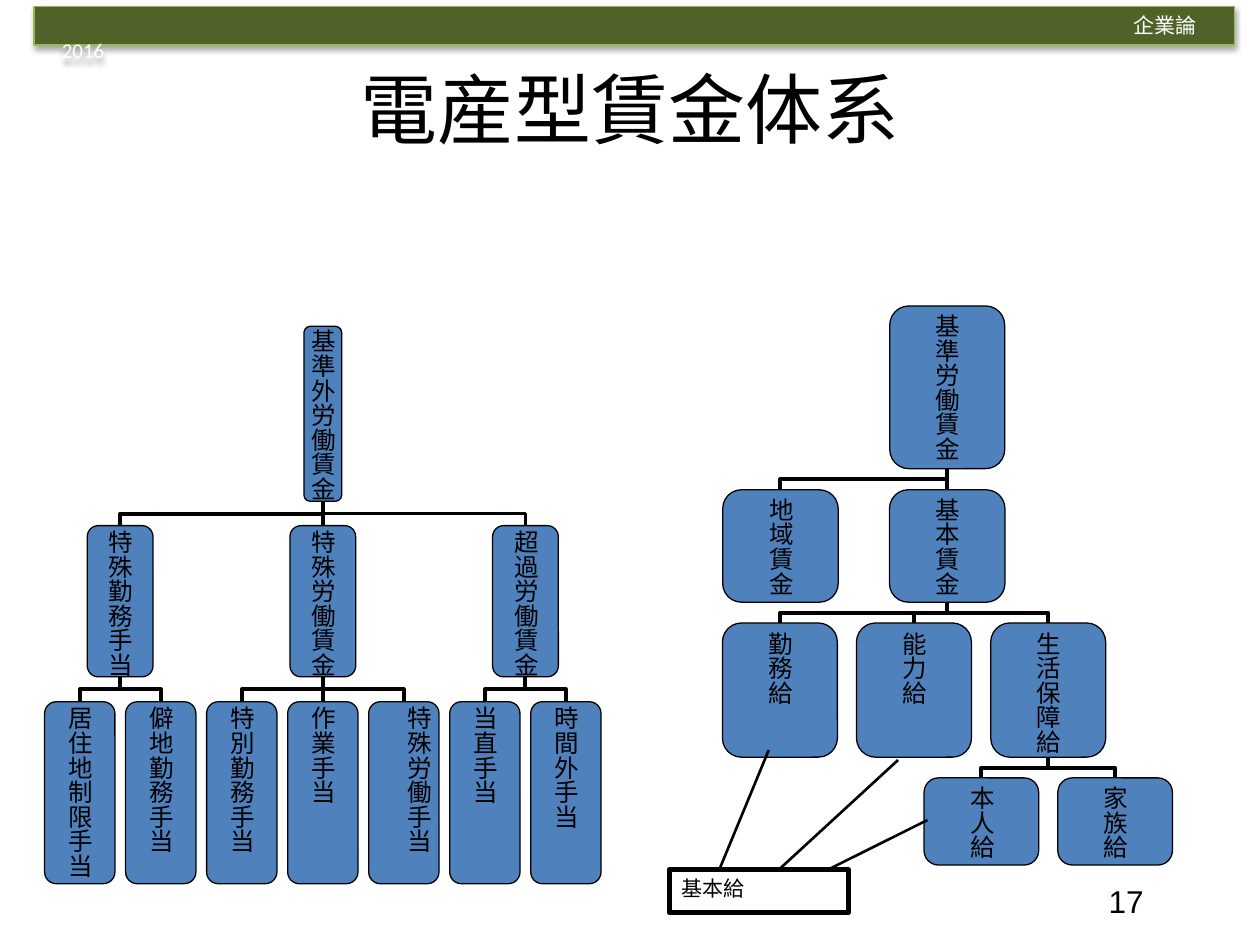
"""Build the wage-system slide: two tree charts, a callout box and its pointer lines."""
from dataclasses import dataclass
from typing import NamedTuple

from lxml.etree import SubElement
from pptx import Presentation
from pptx.dml.color import RGBColor
from pptx.enum.shapes import MSO_CONNECTOR as Conn, MSO_SHAPE as Shape
from pptx.enum.text import MSO_ANCHOR as Anchor, PP_ALIGN as Align
from pptx.oxml.ns import qn
from pptx.util import Pt

BLACK, WHITE, BLUE = "000000", "FFFFFF", "4F81BD"


class Level(NamedTuple):
    top: float
    width: float
    height: float
    pad: float


@dataclass
class Node:
    text: str
    cx: float
    kids: tuple["Node", ...] = ()
    shift: float = 0


def rgb(color: str) -> RGBColor:
    return RGBColor.from_string(color)


def add_run(p, text: str, size: float, font: str = "Arial", color: str = BLACK) -> None:
    r = p.add_run()
    r.text = text
    r.font.size, r.font.name = Pt(size), font
    r.font.color.rgb = rgb(color)


def add_box(s, kind, x: float, y: float, w: float, h: float, fill: str | None, line: str, weight: float):
    sp = s.shapes.add_shape(kind, Pt(x), Pt(y), Pt(w), Pt(h))
    sp.shadow.inherit = False
    if fill:
        sp.fill.solid()
        sp.fill.fore_color.rgb = rgb(fill)
    else:
        sp.fill.background()
    sp.line.color.rgb = rgb(line)
    sp.line.width = Pt(weight)
    return sp


def add_line(s, x1: float, y1: float, x2: float, y2: float, weight: float, kind=Conn.STRAIGHT):
    cn = s.shapes.add_connector(kind, Pt(x1), Pt(y1), Pt(x2), Pt(y2))
    cn.line.color.rgb = rgb(BLACK)
    cn.line.width = Pt(weight)
    SubElement(cn._element.spPr, qn("a:effectLst"))
    return cn


def add_branch(s, child_x: float, child_y: float, parent_x: float, parent_y: float) -> None:
    """Join a child to its parent with an elbow that leaves and arrives vertically."""
    dx, dy = parent_x - child_x, child_y - parent_y
    if abs(dx) < 0.5:
        add_line(s, child_x, child_y, parent_x, parent_y, 2.25)
        return
    mid_x, mid_y = (child_x + parent_x) / 2, (child_y + parent_y) / 2
    side = 1 if dx > 0 else -1
    cn = add_line(s, mid_x - side * dy / 2, mid_y - abs(dx) / 2,
                  mid_x + side * dy / 2, mid_y + abs(dx) / 2, 2.25, Conn.ELBOW)
    degrees = 270 if dx > 0 else 90
    cn._element.spPr.find(qn("a:xfrm")).set("rot", str(degrees * 60000))


def add_node(s, node: Node, level: Level) -> None:
    sp = add_box(s, Shape.ROUNDED_RECTANGLE, node.cx - level.width / 2, level.top,
                 level.width, level.height, BLUE, BLACK, 0.75)
    tf = sp.text_frame
    tf.word_wrap = False
    tf.vertical_anchor = Anchor.MIDDLE
    tf.margin_left, tf.margin_right = Pt(level.pad + 2 * node.shift), Pt(level.pad)
    tf.margin_top = tf.margin_bottom = Pt(level.pad / 2)
    tf._txBody.bodyPr.set("vert", "eaVert")
    p = tf.paragraphs[0]
    p.alignment = Align.CENTER
    add_run(p, node.text, 14)


def add_tree(s, node: Node, levels: list[Level]) -> None:
    level, *below = levels
    for kid in node.kids:
        add_branch(s, kid.cx, below[0].top, node.cx, level.top + level.height)
    add_node(s, node, level)
    for kid in node.kids:
        add_tree(s, kid, below)


def add_header(s) -> None:
    sp = add_box(s, Shape.RECTANGLE, 19.5, 3.8, 686, 22, "4F6228", "98B955", 0.75)
    effects = sp._element.spPr.find(qn("a:effectLst"))
    shadow = SubElement(effects, qn("a:outerShdw"), blurRad=str(Pt(3.1)), dist=str(Pt(1.8)),
                        dir="5400000", rotWithShape="0")
    SubElement(SubElement(shadow, qn("a:srgbClr"), val=BLACK), qn("a:alpha"), val="35000")
    tf = sp.text_frame
    tf.word_wrap = True
    tf.vertical_anchor = Anchor.TOP
    tf.margin_right = Pt(22)
    p = tf.paragraphs[0]
    p.alignment = Align.RIGHT
    add_run(p, "企業論", 12, "Calibri", WHITE)
    p = tf.add_paragraph()
    p.alignment = Align.LEFT
    p._p.get_or_add_pPr().set("marL", str(Pt(8.8)))
    add_run(p, "2016", 12, "Calibri", WHITE)


def add_title(s, text: str) -> None:
    title = s.shapes.title
    title.left, title.top, title.width, title.height = Pt(36), Pt(31.7), Pt(648), Pt(90.7)
    tf = title.text_frame
    tf.vertical_anchor = Anchor.TOP
    p = tf.paragraphs[0]
    p.alignment = Align.CENTER
    add_run(p, text, 44, "Calibri")


def leaf_x(i: int) -> float:
    return 45.6 + 46.3 * i


EXTRA_LEVELS = [Level(186.5, 21.6, 100, 1.4), Level(300.4, 37.6, 86.4, 1.4), Level(401, 40.2, 104, 1.4)]
EXTRA = Node("基準外労働賃金", 184.5, (
    Node("特殊勤務手当", 68.7, (
        Node("居住地制限手当", leaf_x(0)), Node("僻地勤務手当", leaf_x(1)))),
    Node("特殊労働賃金", 184.5, (
        Node("特別勤務手当", leaf_x(2)), Node("作業手当", leaf_x(3)),
        Node("特殊労働手当", leaf_x(4), shift=8.5))),
    Node("超過労働賃金", 300.3, (
        Node("当直手当", leaf_x(5)), Node("時間外手当", leaf_x(6)))),
))
BASE_LEVELS = [Level(174.8, 65.7, 93, 2.9), Level(279.9, 66, 64.2, 2.9),
               Level(356, 65.7, 76.7, 3.6), Level(444.5, 65.5, 49.8, 4.7)]
BASE = Node("基準労働賃金", 541.3, (
    Node("地域賃金", 446),
    Node("基本賃金", 541.3, (
        Node("勤務給", 445.7), Node("能力給", 522.3),
        Node("生活保障給", 599, (Node("本人給", 560.8), Node("家族給", 637.2))))),
))
POINTERS = [(411, 497, 439.3, 428.6), (445, 497, 513.2, 434.3), (473, 497, 530, 468.6)]


def main() -> None:
    prs = Presentation()
    prs.slide_width, prs.slide_height = Pt(720), Pt(540)
    s = prs.slides.add_slide(prs.slide_layouts[5])
    add_header(s)
    add_title(s, "電産型賃金体系")
    add_tree(s, EXTRA, EXTRA_LEVELS)
    add_tree(s, BASE, BASE_LEVELS)

    number = s.shapes.add_textbox(Pt(626.4), Pt(500.4), Pt(57.6), Pt(28.8))
    number.text_frame.word_wrap = True
    add_run(number.text_frame.paragraphs[0], "17", 18)

    callout = add_box(s, Shape.RECTANGLE, 382.5, 497, 102.3, 24.5, None, BLACK, 3)
    tf = callout.text_frame
    tf.word_wrap = True
    tf.vertical_anchor = Anchor.TOP
    p = tf.paragraphs[0]
    p.alignment = Align.LEFT
    add_run(p, "基本給", 12)
    for pointer in POINTERS:
        add_line(s, *pointer, 1.5)
    prs.save("out.pptx")


if __name__ == "__main__":
    main()
